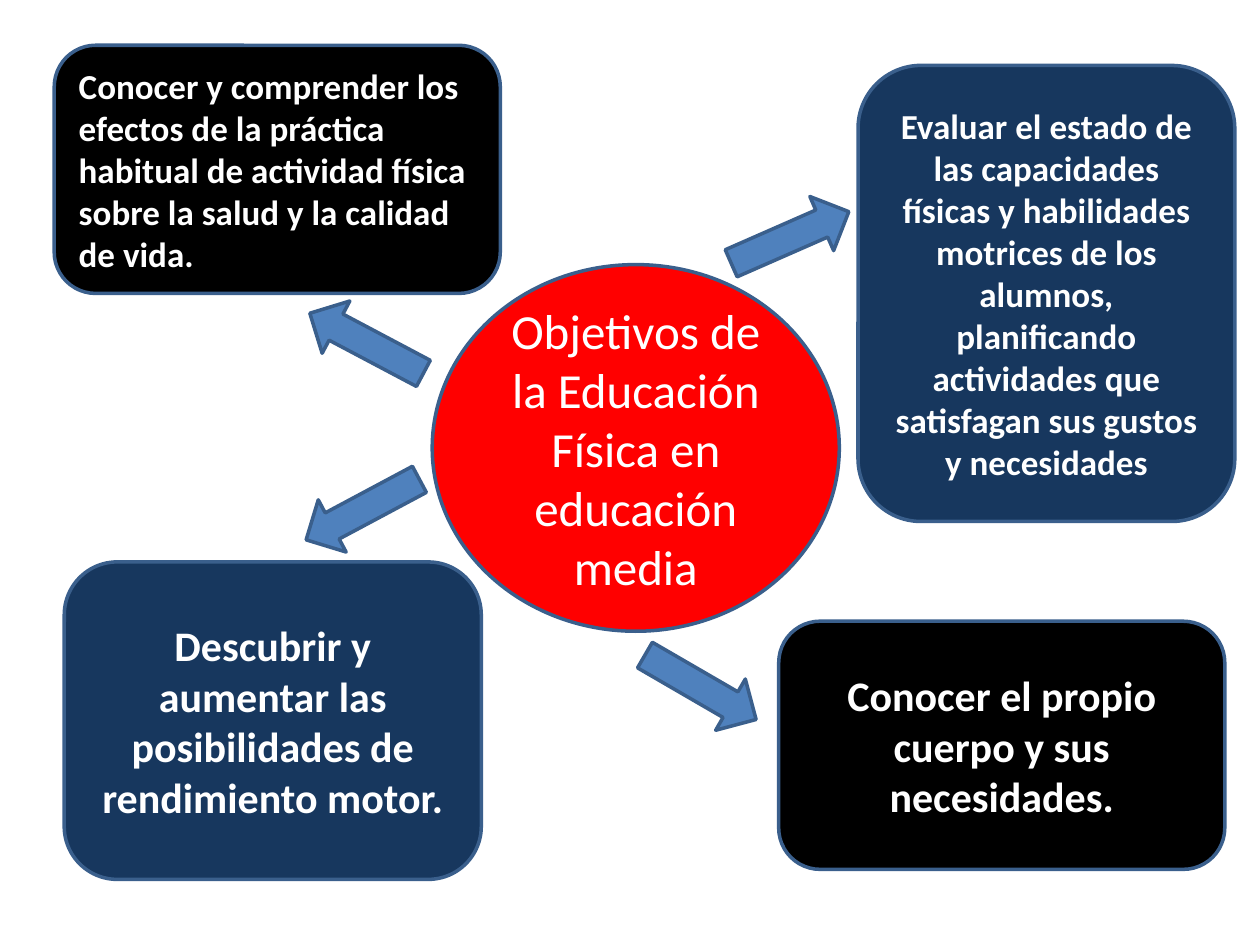
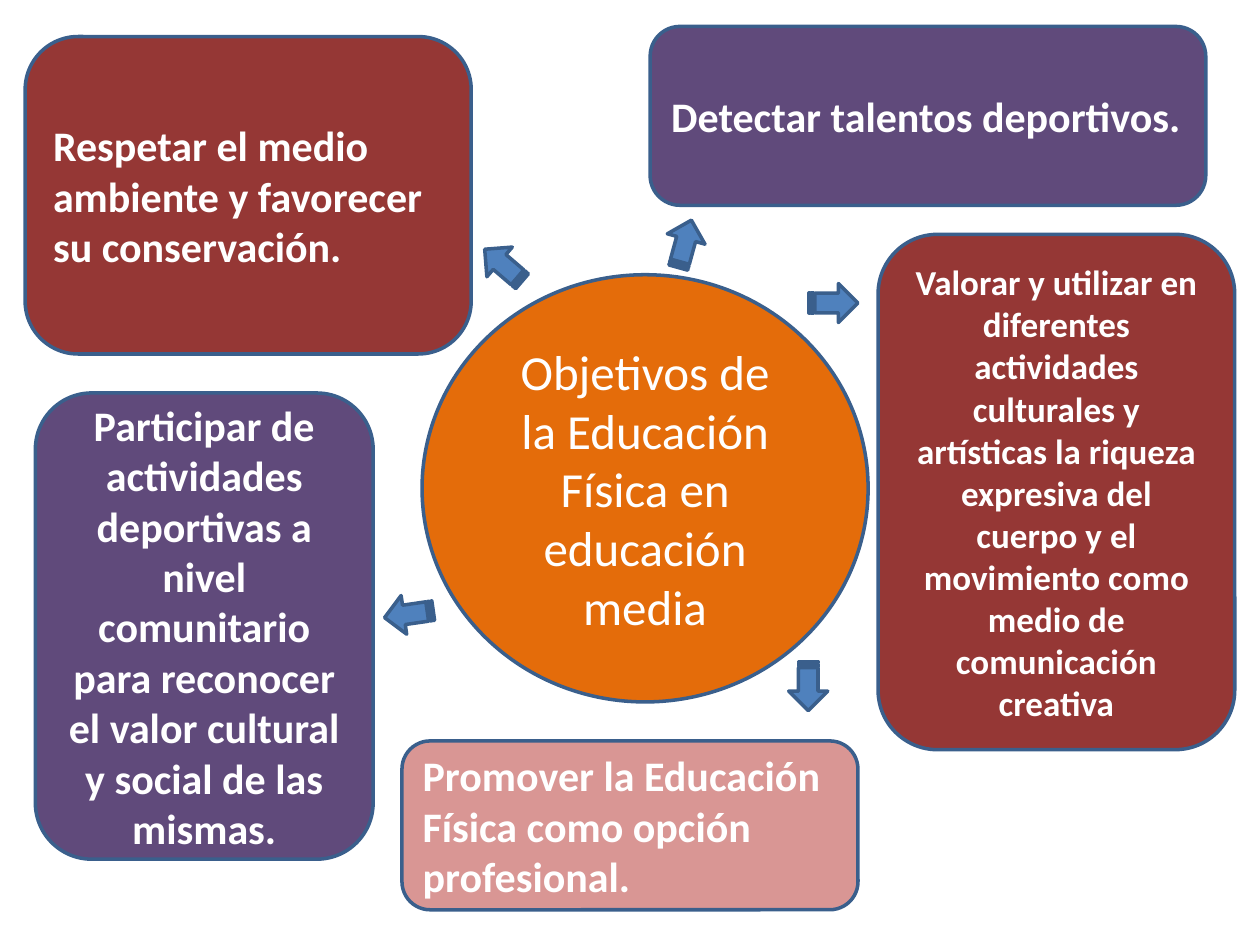
from pptx import Presentation
from pptx.dml.color import RGBColor
from pptx.enum.shapes import MSO_SHAPE
from pptx.enum.text import MSO_ANCHOR, PP_ALIGN
from pptx.util import Pt

ELLIPSE = MSO_SHAPE.OVAL
ROUNDED = MSO_SHAPE.ROUNDED_RECTANGLE
LEFT_ARROW = MSO_SHAPE.LEFT_ARROW
STRIPED_ARROW = MSO_SHAPE.STRIPED_RIGHT_ARROW
LEFT, CENTER = PP_ALIGN.LEFT, PP_ALIGN.CENTER
MIDDLE = MSO_ANCHOR.MIDDLE

FONT = "Calibri"
WHITE = RGBColor(0xFF, 0xFF, 0xFF)
BLACK = RGBColor(0x00, 0x00, 0x00)
RED = RGBColor(0xFF, 0x00, 0x00)
ORANGE = RGBColor(0xE4, 0x6C, 0x0A)
NAVY = RGBColor(0x17, 0x37, 0x5E)
MAROON = RGBColor(0x95, 0x37, 0x35)
PURPLE = RGBColor(0x60, 0x4A, 0x7B)
PINK = RGBColor(0xD9, 0x96, 0x94)
ARROW_BLUE = RGBColor(0x4F, 0x81, 0xBD)
OUTLINE = RGBColor(0x3A, 0x5F, 0x8C)

# Content: boxes are (left, top, width, height) in points
TOPIC = "Objetivos de la Educación Física en educación media"

# goals: text, box, fill, size, alignment; arrows: left, top, rotation
DIAGRAMS = [
    {
        "topic_box": (247, 151.2, 232.6, 209.5),
        "topic_fill": RED,
        "goals": [
            ("Conocer y comprender los efectos de la práctica habitual de "
             "actividad física sobre la salud y la calidad de vida.",
             (31, 25.9, 254.9, 141.8), BLACK, 20, LEFT),
            ("Descubrir y aumentar las posibilidades de rendimiento motor.",
             (36.7, 321.1, 238.3, 181.4), NAVY, 24, CENTER),
            ("Evaluar el estado de las capacidades físicas y habilidades "
             "motrices de los alumnos, planificando actividades que "
             "satisfagan sus gustos y necesidades",
             (490.3, 37.4, 215.3, 260.6), NAVY, 20, CENTER),
            ("Conocer el propio cuerpo y sus necesidades.",
             (445, 355, 254.9, 141.8), BLACK, 24, CENTER),
        ],
        "arrow_kind": LEFT_ARROW,
        "arrow_size": (73.4, 33.8),
        "arrows": [(172.8, 179.3, 27.9), (363.6, 375.8, 210.1),
                   (170.6, 274.3, 331.9), (414.7, 118.8, 156.3)],
    },
    {
        "topic_box": (241.2, 157, 254.9, 244.1),
        "topic_fill": ORANGE,
        "goals": [
            ("Promover la Educación Física como opción profesional.",
             (229.7, 423.4, 260.6, 96.5), PINK, 24, LEFT),
            ("Detectar talentos deportivos.",
             (371.5, 15.1, 317.5, 102.2), PURPLE, 24, LEFT),
            ("Valorar y utilizar en diferentes actividades culturales y "
             "artísticas la riqueza expresiva del cuerpo y el movimiento "
             "como medio de comunicación creativa",
             (501.8, 133.9, 203.8, 294.5), MAROON, 20, CENTER),
            ("Respetar el medio ambiente y favorecer su conservación.",
             (14.4, 20.9, 254.9, 181.4), MAROON, 24, LEFT),
            ("Participar de actividades deportivas a nivel comunitario para "
             "reconocer el valor cultural y social de las mismas.",
             (20.2, 224.6, 193, 266.4), PURPLE, 24, CENTER),
        ],
        "arrow_kind": STRIPED_ARROW,
        "arrow_size": (28.1, 22.3),
        "arrows": [(273.6, 140.4, 220.6), (447.8, 380.9, 90),
                   (219.6, 339.8, 171.8), (377.3, 128.2, 285.4),
                   (462.2, 162, 0)],
    },
]


def add_outlined_shape(slide, kind, box, fill):
    shape = slide.shapes.add_shape(kind, *(Pt(length) for length in box))
    shape.shadow.inherit = False
    shape.fill.solid()
    shape.fill.fore_color.rgb = fill
    shape.line.color.rgb = OUTLINE
    shape.line.width = Pt(2)
    return shape


def add_text_shape(slide, kind, text, box, fill, size, alignment, bold):
    frame = add_outlined_shape(slide, kind, box, fill).text_frame
    frame.word_wrap = True
    frame.vertical_anchor = MIDDLE
    paragraph = frame.paragraphs[0]
    paragraph.text = text
    paragraph.alignment = alignment
    paragraph.font.name = FONT
    paragraph.font.size = Pt(size)
    paragraph.font.bold = bold
    paragraph.font.color.rgb = WHITE


def add_diagram(slide, diagram):
    # Central topic
    add_text_shape(slide, ELLIPSE, TOPIC, diagram["topic_box"],
                   diagram["topic_fill"], 28, CENTER, False)
    # Surrounding goals
    for goal in diagram["goals"]:
        add_text_shape(slide, ROUNDED, *goal, True)
    # Arrows from the topic to each goal
    for left, top, rotation in diagram["arrows"]:
        arrow = add_outlined_shape(slide, diagram["arrow_kind"],
                                   (left, top, *diagram["arrow_size"]),
                                   ARROW_BLUE)
        arrow.rotation = rotation


def main():
    presentation = Presentation()
    presentation.slide_width, presentation.slide_height = Pt(720), Pt(540)
    blank_layout = presentation.slide_layouts[6]
    for diagram in DIAGRAMS:
        add_diagram(presentation.slides.add_slide(blank_layout), diagram)
    presentation.save("out.pptx")


if __name__ == "__main__":
    main()
